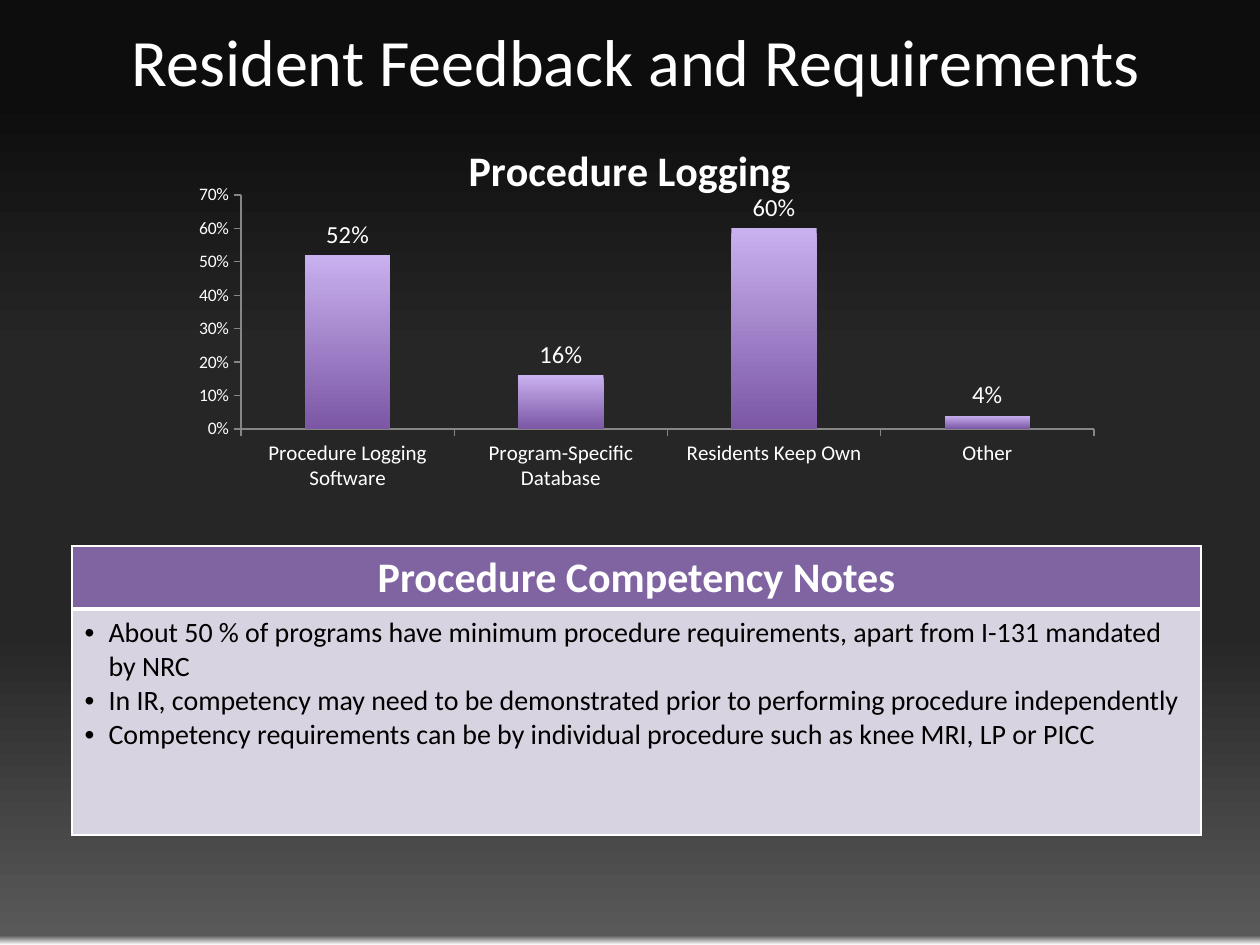
from lxml import etree
from pptx import Presentation
from pptx.chart.data import CategoryChartData
from pptx.dml.color import RGBColor
from pptx.enum.chart import XL_CHART_TYPE, XL_LABEL_POSITION, XL_TICK_MARK
from pptx.enum.text import MSO_ANCHOR, PP_ALIGN
from pptx.oxml.ns import qn
from pptx.util import Pt

PX = 914400 // 126
FONT = "Calibri"
WHITE = "FFFFFF"
CHART_WIDTH, CHART_HEIGHT = 951, 378


def style(font, size, color=WHITE, bold=False):
    font.name, font.size, font.bold = FONT, Pt(size), bold
    font.color.rgb = RGBColor.from_string(color)


def add_layout(parent, index, **values):
    """Insert a manual chart layout; lengths are px inside the chart."""
    for old in parent.findall(qn("c:layout")):
        parent.remove(old)
    layout = etree.Element(qn("c:layout"))
    manual = etree.SubElement(layout, qn("c:manualLayout"))
    whole = {"x": CHART_WIDTH, "w": CHART_WIDTH, "y": CHART_HEIGHT, "h": CHART_HEIGHT}
    for key, value in values.items():
        setting = value / whole[key] if key in whole else value
        etree.SubElement(manual, qn(f"c:{key}")).set("val", str(setting))
    parent.insert(index, layout)


prs = Presentation()
prs.slide_width, prs.slide_height = 1260 * PX, 945 * PX
slide = prs.slides.add_slide(prs.slide_layouts[6])

# Background
backdrop = slide.background.fill
backdrop.gradient()
backdrop.gradient_angle = 270
stops = slide.element.find(".//" + qn("a:gsLst"))
for stop in list(stops):
    stops.remove(stop)
for percent, color in [(10, "0D0D0D"), (37, "262626"), (67, "262626"),
                       (99, "595959"), (100, WHITE)]:
    stop = etree.SubElement(stops, qn("a:gs"), pos=str(percent * 1000))
    etree.SubElement(stop, qn("a:srgbClr"), val=color)

# Heading
heading = slide.shapes.add_textbox(42 * PX, 14 * PX, 1188 * PX, 89 * PX).text_frame
heading.word_wrap = True
heading.margin_top, heading.margin_bottom = 0, 3 * PX
heading.vertical_anchor = MSO_ANCHOR.BOTTOM
heading.text = "Resident Feedback and Requirements"
heading.paragraphs[0].alignment = PP_ALIGN.CENTER
style(heading.paragraphs[0].font, 37.8)

# Procedure logging chart
logging_data = CategoryChartData(number_format="0%")
logging_data.categories = ["Procedure Logging Software", "Program-Specific Database",
                           "Residents Keep Own", "Other"]
logging_data.add_series("Series 1", [0.52, 0.16, 0.6, 0.04])
chart = slide.shapes.add_chart(XL_CHART_TYPE.COLUMN_CLUSTERED, 155 * PX, 121 * PX,
                               CHART_WIDTH * PX, CHART_HEIGHT * PX, logging_data).chart
style(chart.font, 10)
chart.has_legend = False
chart.has_title = True
chart_title = chart.chart_title
chart_title.text_frame.text = "Procedure Logging"
style(chart_title.text_frame.paragraphs[0].font, 24, bold=True)
title_xml = chart.element.find(".//" + qn("c:title"))
add_layout(title_xml, 1, xMode="edge", yMode="edge", x=306, y=14)
add_layout(chart.element.find(".//" + qn("c:plotArea")), 0, layoutTarget="inner",
           xMode="edge", yMode="edge", x=86, y=74, w=853, h=234)

for axis, size in [(chart.category_axis, 12), (chart.value_axis, 10)]:
    axis.has_major_gridlines = False
    axis.major_tick_mark = XL_TICK_MARK.OUTSIDE
    axis.minor_tick_mark = XL_TICK_MARK.NONE
    axis.format.line.color.rgb = RGBColor.from_string("868686")
    axis.format.line.width = Pt(0.75)
    style(axis.tick_labels.font, size)
share_axis = chart.value_axis
share_axis.minimum_scale, share_axis.maximum_scale, share_axis.major_unit = 0, 0.7, 0.1
share_axis.tick_labels.number_format = "0%"
share_axis.tick_labels.number_format_is_linked = False

plot = chart.plots[0]
plot.gap_width = 150
plot.vary_by_categories = False
bars = plot.series[0].format.fill
bars.gradient()
bars.gradient_angle = 270
for stop, color in zip(bars.gradient_stops, ["C9B0EF", "7B57A5"]):
    stop.color.rgb = RGBColor.from_string(color)
plot.has_data_labels = True
labels = plot.data_labels
labels.show_value = True
labels.number_format, labels.number_format_is_linked = "0%", False
labels.position = XL_LABEL_POSITION.OUTSIDE_END
style(labels.font, 14)

# Competency notes table
notes = slide.shapes.add_table(2, 1, 72 * PX, 546 * PX, 1129 * PX, 289 * PX).table
notes.rows[0].height, notes.rows[1].height = 63 * PX, 226 * PX
header, body = notes.cell(0, 0), notes.cell(1, 0)
header.text = "Procedure Competency Notes"
header.text_frame.paragraphs[0].alignment = PP_ALIGN.CENTER
style(header.text_frame.paragraphs[0].font, 24, bold=True)

body.text = "\n".join([
    "About 50 % of programs have minimum procedure requirements, apart from I-131 mandated by NRC",
    "In IR, competency may need to be demonstrated prior to performing procedure independently",
    "Competency requirements can be by individual procedure such as knee MRI, LP or PICC",
])
for note in body.text_frame.paragraphs:
    style(note.font, 16, "000000")
    properties = note._p.get_or_add_pPr()
    properties.set("marL", str(24 * PX))
    properties.set("indent", str(-24 * PX))
    bullet_font = etree.Element(qn("a:buFont"), typeface="Arial")
    bullet = etree.Element(qn("a:buChar"), char="•")
    properties.insert(0, bullet_font)
    properties.insert(1, bullet)

for cell, color, top, bottom in [(header, "8064A2", 1, 3), (body, "D8D3E0", 3, 1)]:
    cell_xml = cell._tc.get_or_add_tcPr()
    for side, width in [("L", 1), ("R", 1), ("T", top), ("B", bottom)]:
        border = etree.SubElement(cell_xml, qn(f"a:ln{side}"), w=str(Pt(width)))
        solid = etree.SubElement(border, qn("a:solidFill"))
        etree.SubElement(solid, qn("a:srgbClr"), val=WHITE)
    cell.fill.solid()
    cell.fill.fore_color.rgb = RGBColor.from_string(color)

prs.save("out.pptx")
